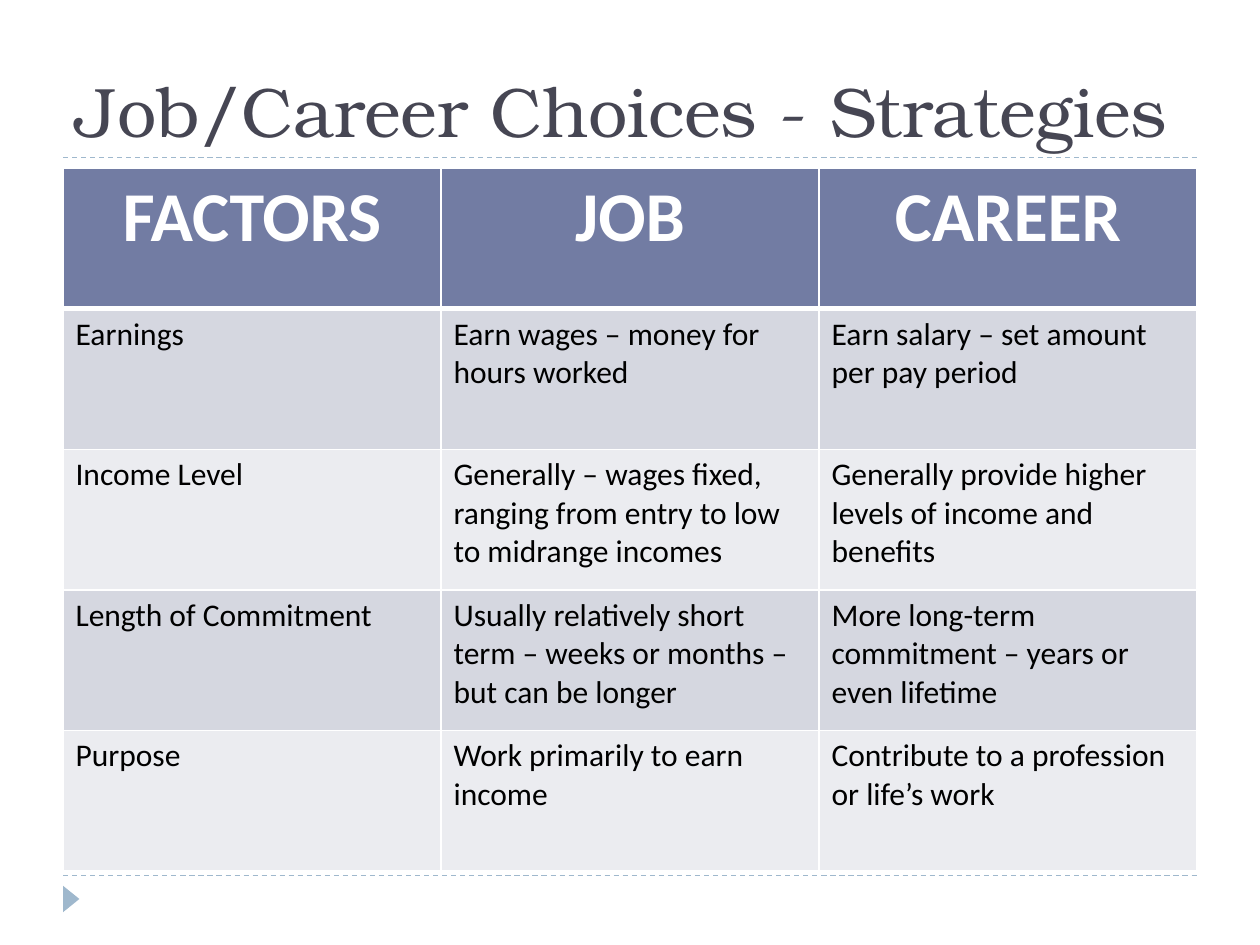
from lxml.etree import SubElement
from pptx import Presentation
from pptx.dml.color import RGBColor
from pptx.enum.dml import MSO_LINE
from pptx.enum.shapes import MSO_CONNECTOR, MSO_SHAPE
from pptx.enum.text import MSO_ANCHOR as Anchor, PP_ALIGN as Align
from pptx.oxml.ns import qn
from pptx.util import Inches, Pt

COLORS = {
    "title": "464653",
    "accent": "9FB8CD",
    "header": "727CA3",
    "odd": "D5D7E0",
    "even": "EBECF0",
    "white": "FFFFFF",
    "black": "000000",
}

ROWS = [
    ("FACTORS", "JOB", "CAREER"),
    ("Earnings", "Earn wages – money for hours worked",
     "Earn salary – set amount per pay period"),
    ("Income Level",
     "Generally – wages fixed, ranging from entry to low to midrange incomes",
     "Generally provide higher levels of income and benefits"),
    ("Length of Commitment",
     "Usually relatively short term – weeks or months – but can be longer",
     "More long-term commitment – years or even lifetime"),
    ("Purpose", "Work primarily to earn income",
     "Contribute to a profession or life’s work"),
]


def color(name):
    return RGBColor.from_string(COLORS[name])


def write(frame, text, size=18, font="Calibri", fill="black", bold=False,
          align=Align.LEFT):
    paragraph = frame.paragraphs[0]
    paragraph.alignment = align
    run = paragraph.add_run()
    run.text = text
    run.font.size = Pt(size)
    run.font.name = font
    run.font.bold = bold
    run.font.color.rgb = color(fill)


def add_border(cell, side, width):
    line = SubElement(cell._tc.get_or_add_tcPr(), qn(f"a:ln{side}"),
                      w=str(Pt(width)))
    solid = SubElement(line, qn("a:solidFill"))
    SubElement(solid, qn("a:srgbClr"), val=COLORS["white"])


class SlideBuilder:
    CELL = Inches(0.5)

    def __init__(self, presentation):
        self.slide = presentation.slides.add_slide(presentation.slide_layouts[6])
        self.shapes = self.slide.shapes

    def grid(self, *units):
        return [round(unit * self.CELL) for unit in units]

    def rule(self, row):
        line = self.shapes.add_connector(
            MSO_CONNECTOR.STRAIGHT, *self.grid(1, row, 19, row))
        line.line.color.rgb = color("accent")
        line.line.width = Pt(0.75)
        line.line.dash_style = MSO_LINE.DASH
        SubElement(line._element.spPr, qn("a:effectLst"))

    def marker(self, *box):
        shape = self.shapes.add_shape(
            MSO_SHAPE.ISOSCELES_TRIANGLE, *self.grid(*box))
        shape.rotation = 90
        shape.shadow.inherit = False
        shape.fill.solid()
        shape.fill.fore_color.rgb = color("accent")
        shape.line.fill.background()

    def title(self, text, *box):
        frame = self.shapes.add_textbox(*self.grid(*box)).text_frame
        frame.word_wrap = True
        frame.vertical_anchor = Anchor.BOTTOM
        write(frame, text, size=40, font="TeX Gyre Bonum", fill="title")

    def table(self, rows, *box):
        table = self.shapes.add_table(
            len(rows), len(rows[0]), *self.grid(*box)).table
        for i, texts in enumerate(rows):
            for j, text in enumerate(texts):
                self.table_cell(table.cell(i, j), text, i)

    def table_cell(self, cell, text, row):
        for side in "LRTB":
            heavy = (row, side) in ((0, "B"), (1, "T"))
            add_border(cell, side, 3 if heavy else 1)
        cell.fill.solid()
        if row == 0:
            cell.fill.fore_color.rgb = color("header")
            write(cell.text_frame, text, size=40, fill="white", bold=True,
                  align=Align.CENTER)
        else:
            cell.fill.fore_color.rgb = color("odd" if row % 2 else "even")
            write(cell.text_frame, text)


def main():
    presentation = Presentation()
    presentation.slide_width = Inches(10)
    presentation.slide_height = Inches(7.5)
    builder = SlideBuilder(presentation)
    for row in (13.9, 2.5):
        builder.rule(row)
    builder.marker(0.92, 14.14, 0.42, 0.26)
    builder.title("Job/Career Choices - Strategies", 1, 0.34, 18, 2.16)
    builder.table(ROWS, 1, 2.67, 18, 11.16)
    presentation.save("out.pptx")


if __name__ == "__main__":
    main()
